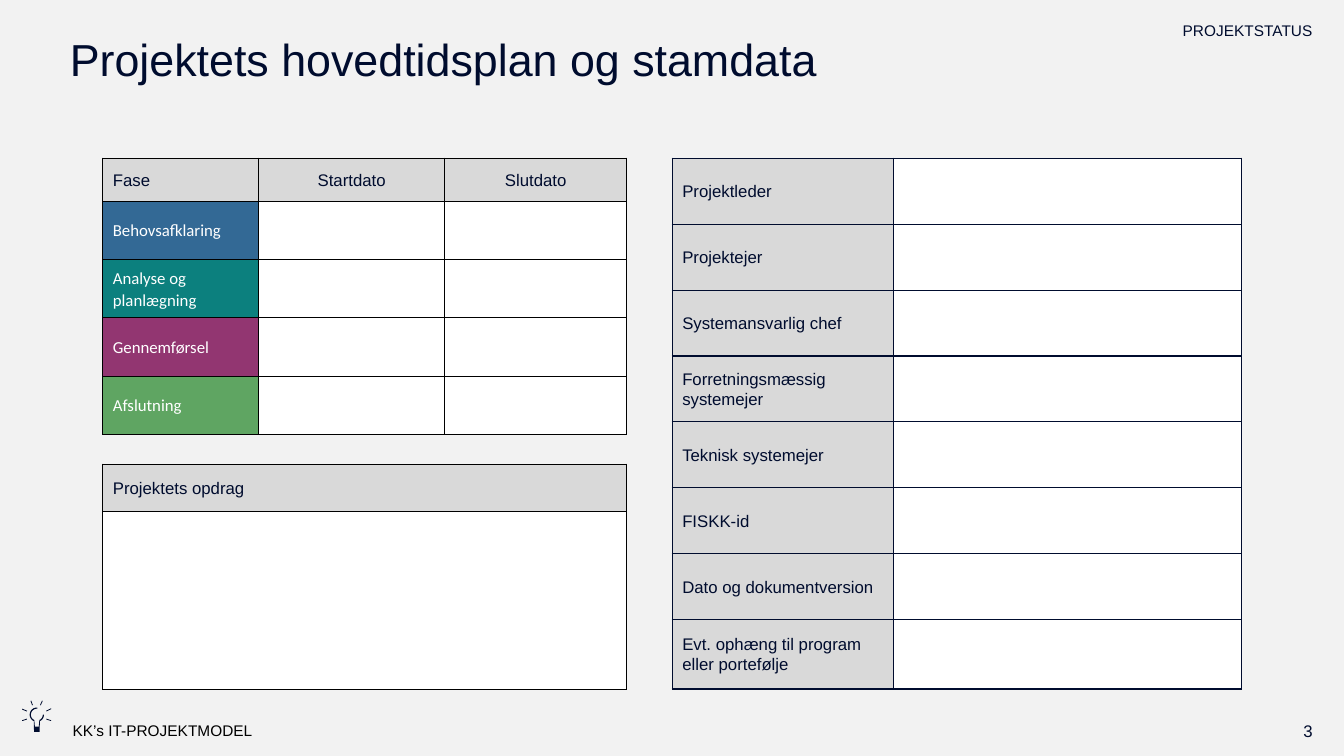
from math import cos, hypot, radians, sin

from lxml import etree
from pptx import Presentation
from pptx.dml.color import RGBColor
from pptx.enum.text import MSO_ANCHOR, PP_ALIGN
from pptx.oxml.ns import qn
from pptx.util import Cm, Pt

LEFT, MID, RIGHT = PP_ALIGN.LEFT, PP_ALIGN.CENTER, PP_ALIGN.RIGHT
TOP, CENTER = MSO_ANCHOR.TOP, MSO_ANCHOR.MIDDLE
NAVY, BLACK, WHITE, GREY = "000C2E", "000000", "FFFFFF", "D9D9D9"


def rgb(code):
    return RGBColor.from_string(code)


def write(host, text, size=12, color=NAVY, font="Arial", align=LEFT,
          anchor=TOP, space=None, after=None):
    frame = host.text_frame
    frame.word_wrap = True
    host.vertical_anchor = frame.vertical_anchor = anchor
    para = frame.paragraphs[0]
    para.alignment = align
    para.line_spacing = space
    para.space_after = after
    run = para.add_run()
    run.text = text
    run.font.size = Pt(size)
    run.font.name = font
    run.font.color.rgb = rgb(color)


prs = Presentation()
prs.slide_width, prs.slide_height = Cm(33.87), Cm(19.05)
slide = prs.slides.add_slide(prs.slide_layouts[6])
slide.background.fill.solid()
slide.background.fill.fore_color.rgb = rgb("F2F2F2")
shapes = slide.shapes

# Title, header and footer
labels = [
    ("PROJEKTSTATUS", (25.89, 0.41, 7.44, 0.74), dict(size=11, align=RIGHT)),
    ("KK’s IT-PROJEKTMODEL", (1.58, 18.04, 6.2, 0.74), dict(size=11, color=BLACK)),
    ("3", (25.71, 17.91, 7.62, 1.02), dict(align=RIGHT, anchor=CENTER)),
    ("Projektets hovedtidsplan og stamdata", (1.51, 0.84, 30, 3),
     dict(size=32, space=0.9)),
]
for text, place, form in labels:
    write(shapes.add_textbox(*map(Cm, place)), text, **form)

# Light bulb: outer and inner edge of the glass, open at the upper right
edges = []
for radius, half, foot in [(0.18, 0.07, 18.44), (0.15, 0.05, 18.31)]:
    arcs = [[(0.93 + radius * cos(radians(a)), 18.01 + radius * sin(radians(a)))
             for a in range(start, stop, -5)]
            for start, stop in [(275, 110), (65, -5)]]
    edges.append(arcs[0] + [(0.93 - half, foot), (0.93 + half, foot)] + arcs[1])
paths = [edges[0] + edges[1][::-1]]

# Rays of the bulb, as thin bars
rays = [(1.17, 17.92, 1.29, 17.86), (0.56, 18.16, 0.68, 18.12),
        (1.17, 18.12, 1.29, 18.16), (0.56, 17.87, 0.68, 17.92),
        (1.02, 17.77, 1.07, 17.66), (0.82, 17.77, 0.78, 17.66)]
for x1, y1, x2, y2 in rays:
    ratio = 0.01 / hypot(x2 - x1, y2 - y1)
    dx, dy = (y1 - y2) * ratio, (x2 - x1) * ratio
    paths.append([(x1 + dx, y1 + dy), (x2 + dx, y2 + dy),
                  (x2 - dx, y2 - dy), (x1 - dx, y1 - dy)])

pen = None
for path in paths:
    first, *rest = [(Cm(x), Cm(y)) for x, y in path]
    if pen:
        pen.move_to(*first)
    else:
        pen = shapes.build_freeform(*first, scale=1.0)
    pen.add_line_segments(rest, close=True)
bulb = pen.convert_to_shape()
bulb.fill.solid()
bulb.fill.fore_color.rgb = rgb(NAVY)
bulb.line.fill.background()
bulb.shadow.inherit = False

# Tables: a cell is its text, fill, text colour, font and alignment
blank = ("", WHITE, NAVY, "Arial", LEFT)
heads = [(text, GREY, NAVY, "Arial", align) for text, align in
         [("Fase", LEFT), ("Startdato", MID), ("Slutdato", MID)]]
stages = [("Behovsafklaring", "336995"), ("Analyse og planlægning", "0C807E"),
          ("Gennemførsel", "923671"), ("Afslutning", "5FA562")]
phases = [heads] + [[(text, fill, WHITE, "Calibri", LEFT), blank, blank]
                    for text, fill in stages]
facts = [[(text, GREY, NAVY, "Arial", LEFT), blank] for text in [
    "Projektleder", "Projektejer", "Systemansvarlig chef",
    "Forretningsmæssig systemejer", "Teknisk systemejer", "FISKK-id",
    "Dato og dokumentversion", "Evt. ophæng til program eller portefølje"]]
task = [[("Projektets opdrag", GREY, NAVY, "Arial", LEFT)], [blank]]

tables = [
    (phases, 2.59, 3.99, [3.93, 4.69, 4.58], [1.08] + [1.47] * 4, BLACK),
    (facts, 16.94, 3.99, [5.58, 8.76], [1.66] * 7 + [1.75], NAVY),
    (task, 2.59, 11.7, [13.2], [1.19, 4.49], BLACK),
]
for rows, left, top, widths, heights, edge in tables:
    table = shapes.add_table(len(heights), len(widths), Cm(left), Cm(top),
                             Cm(sum(widths)), Cm(sum(heights))).table
    table.first_row = table.horz_banding = False
    for col, width in zip(table.columns, widths):
        col.width = Cm(width)
    for row, height, cells in zip(table.rows, heights, rows):
        row.height = Cm(height)
        for cell, (text, fill, color, font, align) in zip(row.cells, cells):
            props = cell._tc.get_or_add_tcPr()
            for side in ("lnL", "lnR", "lnT", "lnB"):
                line = etree.SubElement(props, qn("a:" + side), w=str(Pt(1)))
                solid = etree.SubElement(line, qn("a:solidFill"))
                etree.SubElement(solid, qn("a:srgbClr"), val=edge)
            cell.fill.solid()
            cell.fill.fore_color.rgb = rgb(fill)
            if text:
                write(cell, text, color=color, font=font, align=align,
                      anchor=CENTER, space=1.07, after=Pt(8))

prs.save("out.pptx")
